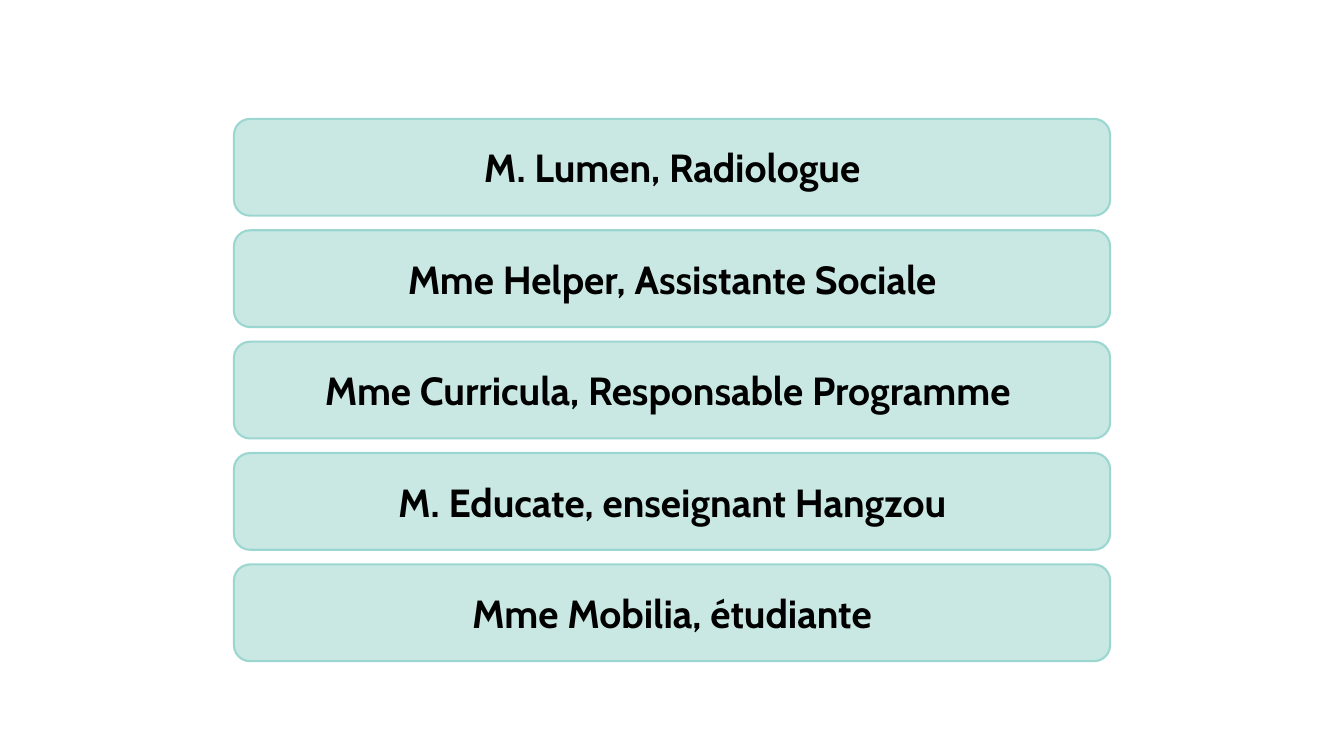
import pptx
import pptx.util
import pptx.dml.color
import pptx.enum.shapes
import pptx.enum.text
from pptx.util import Inches

COLORS = {"card": "C9E8E3", "border": "9BD7D0", "text": "000000"}
PEOPLE = [
    "M. Lumen, Radiologue",
    "Mme Helper, Assistante Sociale",
    "Mme Curricula, Responsable Programme ",
    "M. Educate, enseignant Hangzou",
    "Mme Mobilia, étudiante",
]


def color(name):
    return pptx.dml.color.RGBColor.from_string(COLORS[name])


def add_card(page, left, top, width, height, text):
    card = page.shapes.add_shape(
        pptx.enum.shapes.MSO_SHAPE.ROUNDED_RECTANGLE,
        Inches(left), Inches(top), Inches(width), Inches(height))
    card.shadow.inherit = False
    card.fill.solid()
    card.fill.fore_color.rgb = color("card")
    card.line.color.rgb = color("border")
    card.line.width = pptx.util.Pt(1.5)
    frame = card.text_frame
    frame.word_wrap = True
    frame.vertical_anchor = pptx.enum.text.MSO_ANCHOR.MIDDLE
    para = frame.paragraphs[0]
    para.text = text
    para.alignment = pptx.enum.text.PP_ALIGN.CENTER
    para.font.name = "Cabin"
    para.font.size = pptx.util.Pt(28)
    para.font.bold = True
    para.font.color.rgb = color("text")


def add_people_list(page, left, top, width, height, people):
    card_height = 0.96
    pitch = (height - card_height) / (len(people) - 1)
    for row, person in enumerate(people):
        add_card(page, left, top + row * pitch, width, card_height, person)


def main():
    deck = pptx.Presentation()
    deck.slide_width = Inches(13.33)
    deck.slide_height = Inches(7.5)
    page = deck.slides.add_slide(deck.slide_layouts[6])
    add_people_list(page, 2.32, 1.18, 8.69, 5.38, PEOPLE)
    deck.save("out.pptx")


if __name__ == "__main__":
    main()
